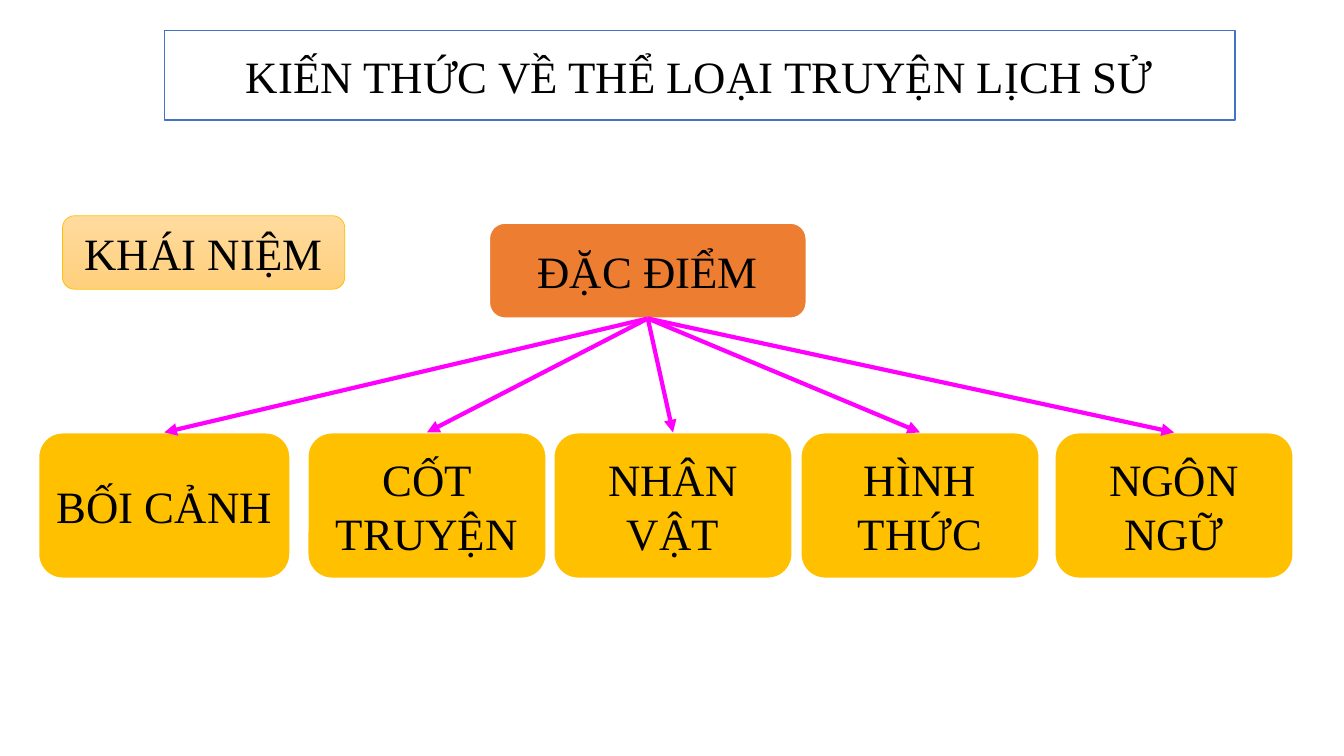
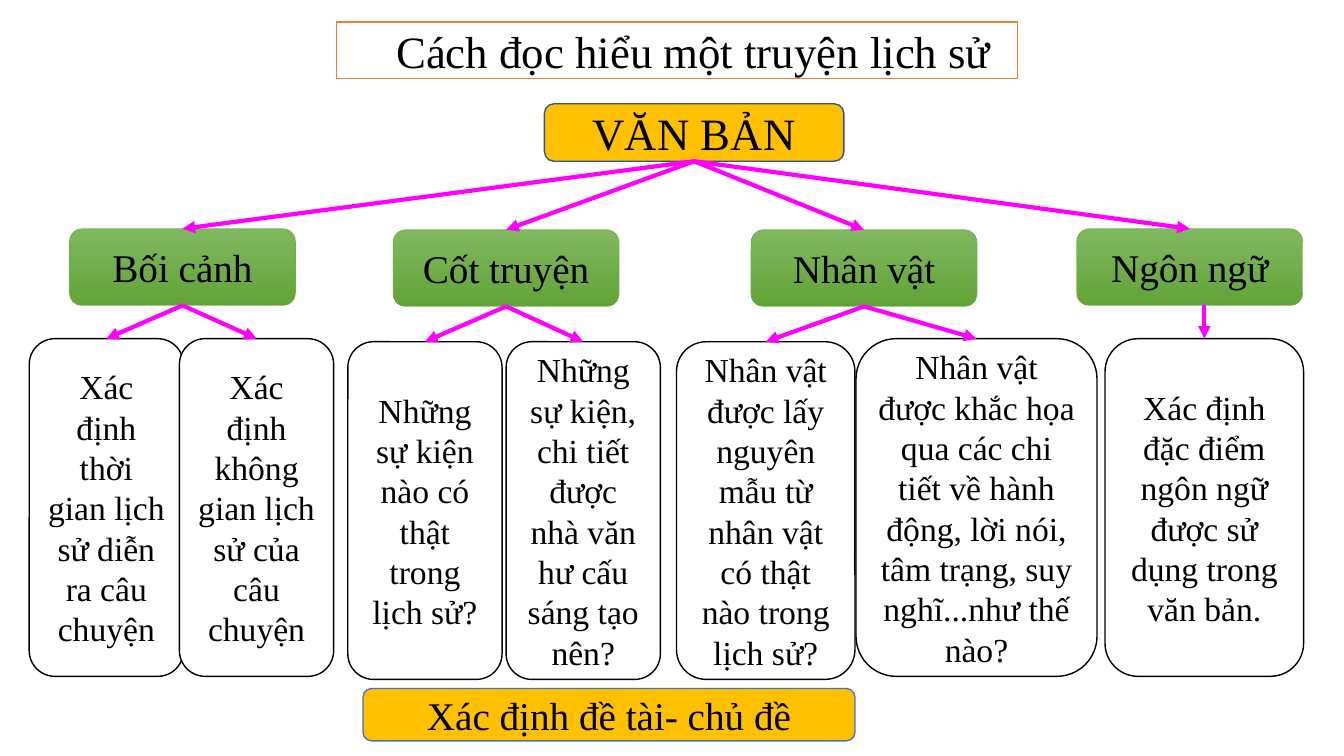
from lxml import etree
from pptx import Presentation
from pptx.dml.color import RGBColor
from pptx.enum.shapes import MSO_CONNECTOR, MSO_SHAPE
from pptx.enum.text import MSO_ANCHOR, MSO_AUTO_SIZE, PP_ALIGN
from pptx.oxml import parse_xml
from pptx.oxml.ns import nsdecls, qn
from pptx.util import Inches, Pt

ROUNDED = MSO_SHAPE.ROUNDED_RECTANGLE
STRAIGHT = MSO_CONNECTOR.STRAIGHT
TOP_SITE, BOTTOM_SITE = 0, 2

BLACK, WHITE = "000000", "FFFFFF"
BLUE, NAVY = "4472C4", "325491"
ORANGE, GOLD, MAGENTA = "ED7D31", "FFC000", "FF00FF"
PEACH_FADE = ("FFDB9E", "FFD07C")
GREEN, GREEN_FADE = "70AD47", ("81B861", "62A336")

TITLE = {"fill": WHITE, "size": 32, "width": 1}
TOPIC = {"fill": ORANGE, "line": WHITE, "width": 1.5, "size": 32}
FEATURE = {**TOPIC, "fill": GOLD}
CONCEPT = {"fill": PEACH_FADE, "line": GOLD, "width": 0.5, "size": 32}
SOURCE_TEXT = {"fill": GOLD, "line": NAVY, "width": 1, "size": 32}
ELEMENT = {"fill": GREEN_FADE, "line": GREEN, "width": 0.5, "size": 28}
QUESTION = {"fill": WHITE, "line": BLACK, "width": 1, "size": 24}
THEME = {"fill": GOLD, "line": BLUE, "width": 1, "size": 28}


def color(value):
    return RGBColor.from_string(value)


def add_box(slide, text, place, style, is_title=False):
    """Add a rounded box, or turn the slide's title placeholder into one."""
    lengths = [Inches(length) for length in place]
    if is_title:
        box = slide.shapes.title
        box.left, box.top, box.width, box.height = lengths
        box._element.spPr.append(parse_xml(
            f'<a:prstGeom {nsdecls("a")} prst="roundRect"><a:avLst/></a:prstGeom>'))
    else:
        box = slide.shapes.add_shape(ROUNDED, *lengths)
        box.shadow.inherit = False

    if isinstance(style["fill"], tuple):
        box.fill.gradient()
        box.fill.gradient_angle = 270
        for stop, shade in zip(box.fill.gradient_stops, style["fill"]):
            stop.color.rgb = color(shade)
    else:
        box.fill.solid()
        box.fill.fore_color.rgb = color(style["fill"])
    box.line.color.rgb = color(style["line"])
    box.line.width = Pt(style["width"])

    frame = box.text_frame
    frame.text = text
    frame_format = {"word_wrap": True, "auto_size": MSO_AUTO_SIZE.NONE,
                    "vertical_anchor": MSO_ANCHOR.MIDDLE,
                    "margin_left": Inches(style.get("indent", 0.1))}
    for name, value in frame_format.items():
        setattr(frame, name, value)
    para = frame.paragraphs[0]
    para.alignment = PP_ALIGN.CENTER
    para.line_spacing = 1.0
    for name, value in {"name": "Times New Roman", "size": Pt(style["size"])}.items():
        setattr(para.font, name, value)
    para.font.color.rgb = color(BLACK)
    return box


def add_arrow(slide, parent, child, vertical=False):
    """Point from the bottom of parent to the top of child."""
    end_x = child.left + child.width // 2
    start_x = end_x if vertical else parent.left + parent.width // 2
    arrow = slide.shapes.add_connector(
        STRAIGHT, start_x, parent.top + parent.height, end_x, child.top)
    if not vertical:
        arrow.begin_connect(parent, BOTTOM_SITE)
        arrow.end_connect(child, TOP_SITE)
    arrow.line.color.rgb = color(MAGENTA)
    arrow.line.width = Pt(3)
    etree.SubElement(arrow.line._get_or_add_ln(), qn("a:tailEnd"), type="triangle")
    etree.SubElement(arrow._element.spPr, qn("a:effectLst"))


deck = Presentation()
deck.slide_width, deck.slide_height = Inches(13.33), Inches(7.5)
title_only = deck.slide_layouts[5]

# Slide 1: features of the genre
slide = deck.slides.add_slide(title_only)
add_box(slide, "KIẾN THỨC VỀ THỂ LOẠI TRUYỆN LỊCH SỬ", (1.63, 0.3, 10.62, 0.89),
        {**TITLE, "line": BLUE}, is_title=True)
add_box(slide, "KHÁI NIỆM", (0.62, 2.14, 2.8, 0.73), CONCEPT)
topic = add_box(slide, "ĐẶC ĐIỂM", (4.85, 2.21, 3.15, 0.95), TOPIC)

features = [
    ("BỐI CẢNH", 0.38, 2.5),
    ("CỐT TRUYỆN", 3.05, 2.37),
    ("NHÂN VẬT", 5.49, 2.37),
    ("HÌNH THỨC", 7.94, 2.37),
    ("NGÔN NGỮ", 10.46, 2.37),
]
for text, left, width in features:
    feature = add_box(slide, text, (left, 4.29, width, 1.45), FEATURE)
    add_arrow(slide, topic, feature)

# Slide 2: how to read a historical story
slide = deck.slides.add_slide(title_only)
add_box(slide, "Cách đọc hiểu một truyện lịch sử", (3.34, 0.22, 6.75, 0.56),
        {**TITLE, "line": ORANGE, "indent": 0.43}, is_title=True)
source_text = add_box(slide, "VĂN BẢN", (5.4, 1.03, 2.97, 0.57), SOURCE_TEXT)

# Each element: text, left, top, then its questions as text, left, top, width
elements = [
    ("Bối cảnh", 0.69, 2.27, [
        ("Xác định thời gian lịch sử diễn ra câu chuyện", 0.29, 3.36, 1.53),
        ("Xác định không gian lịch sử của câu chuyện", 1.78, 3.36, 1.53)]),
    ("Cốt truyện", 3.9, 2.28, [
        ("Những sự kiện nào có thật trong lịch sử?", 3.45, 3.39, 1.53),
        ("Những sự kiện, chi tiết được nhà văn hư cấu sáng tạo nên?",
         5.02, 3.39, 1.53)]),
    ("Nhân vật", 7.45, 2.28, [
        ("Nhân vật được lấy nguyên mẫu từ nhân vật có thật nào trong lịch sử?",
         6.71, 3.39, 1.77),
        ("Nhân vật được khắc họa qua các chi tiết về hành động, lời nói, "
         "tâm trạng, suy nghĩ...như thế nào?", 8.49, 3.36, 2.39)]),
    ("Ngôn ngữ", 10.68, 2.27, [
        ("Xác định đặc điểm ngôn ngữ được sử dụng trong văn bản.",
         10.96, 3.36, 1.97)]),
]
for text, left, top, questions in elements:
    element = add_box(slide, text, (left, top, 2.24, 0.76), ELEMENT)
    add_arrow(slide, source_text, element)
    for wording, question_left, question_top, width in questions:
        question = add_box(slide, wording, (question_left, question_top, width, 3.35),
                           QUESTION)
        add_arrow(slide, element, question, vertical=len(questions) == 1)

add_box(slide, "Xác định đề tài- chủ đề", (3.6, 6.83, 4.88, 0.52), THEME)

deck.save("out.pptx")
